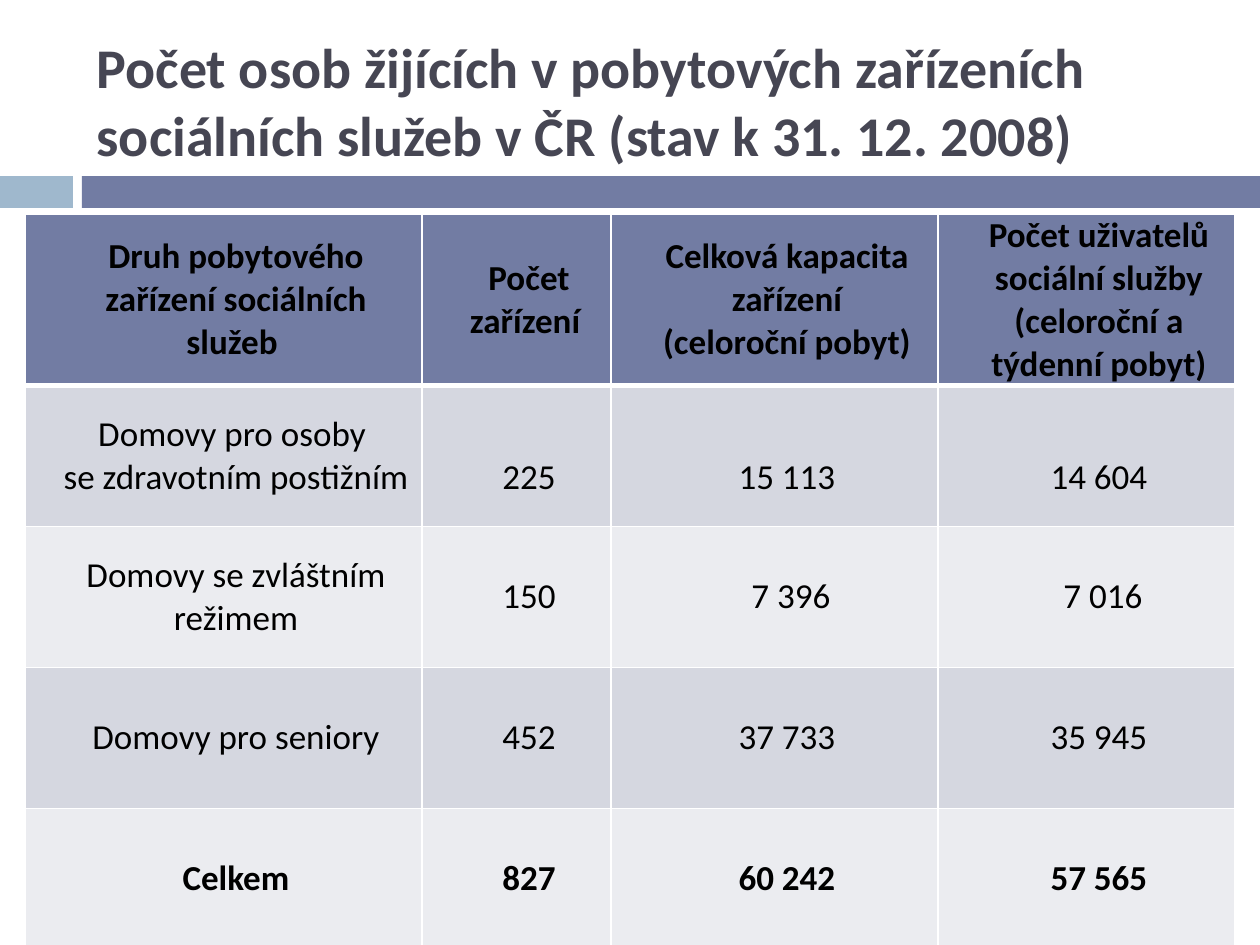
import pptx
import pptx.util
import pptx.dml.color
import pptx.enum.shapes
import pptx.enum.text
import pptx.oxml
import pptx.oxml.ns

RGBColor = pptx.dml.color.RGBColor
WHITE = RGBColor(0xFF, 0xFF, 0xFF)
BLACK = RGBColor(0x00, 0x00, 0x00)
SLATE = RGBColor(0x46, 0x46, 0x53)
INDIGO = RGBColor(0x72, 0x7C, 0xA3)
SKY = RGBColor(0x9F, 0xB8, 0xCD)
BAND_DARK = RGBColor(0xD5, 0xD7, 0xE0)
BAND_LIGHT = RGBColor(0xEB, 0xEC, 0xF0)

PX = 914400 / 126
MIDDLE = pptx.enum.text.MSO_ANCHOR.MIDDLE
LEFT = pptx.enum.text.PP_ALIGN.LEFT
CENTER = pptx.enum.text.PP_ALIGN.CENTER

TITLE = "Počet osob žijících v pobytových zařízeních sociálních služeb v ČR (stav k 31. 12. 2008)"
COLUMNS = [397, 189, 327, 297]
ROWS = [171, 141, 141, 141, 141]
FACILITIES = [
    [
        "Druh pobytového zařízení sociálních služeb ",
        "Počet zařízení ",
        "Celková kapacita zařízení\n(celoroční pobyt)",
        "Počet uživatelů sociální služby (celoroční a týdenní pobyt)",
    ],
    ["Domovy pro osoby \nse zdravotním postižním", "225", "15 113", "14 604"],
    ["Domovy se zvláštním režimem", "150", " 7 396", " 7 016"],
    ["Domovy pro seniory", "452", "37 733", "35 945"],
    ["Celkem", "827", "60 242", "57 565"],
]


def emu(px):
    return pptx.util.Emu(round(px * PX))


def apply(target, values):
    for name, value in values.items():
        setattr(target, name, value)


class SlideBuilder:
    font = "Calibri"
    indent = 25
    inset = 9
    line_drop = 43

    def __init__(self, deck):
        self.page = deck.slides.add_slide(deck.slide_layouts[5])

    def fill_text(self, frame, text, size, color, bold, align):
        frame.text = text
        for para in frame.paragraphs:
            para.alignment = align
            for span in para.runs:
                apply(span.font, {"name": self.font, "size": pptx.util.Pt(size), "bold": bold})
                span.font.color.rgb = color

    def title(self, text, left, top, width, height):
        box = self.page.shapes.title
        apply(box, {"left": emu(left), "top": emu(top), "width": emu(width), "height": emu(height)})
        apply(box.text_frame, {
            "word_wrap": True,
            "vertical_anchor": MIDDLE,
            "auto_size": pptx.enum.text.MSO_AUTO_SIZE.NONE,
        })
        self.fill_text(box.text_frame, text, 32, SLATE, True, LEFT)

    def bar(self, left, top, width, height, color):
        kind = pptx.enum.shapes.MSO_SHAPE.RECTANGLE
        shape = self.page.shapes.add_shape(kind, emu(left), emu(top), emu(width), emu(height))
        shape.shadow.inherit = False
        shape.fill.solid()
        shape.fill.fore_color.rgb = color
        shape.line.fill.background()

    def borders(self, cell, widths):
        properties = cell._tc.get_or_add_tcPr()
        for index, (side, points) in enumerate(widths.items()):
            line = pptx.oxml.parse_xml(
                f'<a:ln{side} {pptx.oxml.ns.nsdecls("a")} w="{pptx.util.Pt(points)}">'
                f'<a:solidFill><a:srgbClr val="{WHITE}"/></a:solidFill></a:ln{side}>'
            )
            properties.insert(index, line)

    def cell(self, cell, text, fill, bold, drop):
        apply(cell, {
            "vertical_anchor": MIDDLE,
            "margin_left": emu(self.inset),
            "margin_right": emu(self.inset),
            "margin_top": emu(drop),
            "margin_bottom": 0,
        })
        cell.fill.solid()
        cell.fill.fore_color.rgb = fill
        self.fill_text(cell.text_frame, text, 20, BLACK, bold, CENTER)
        for para in cell.text_frame.paragraphs:
            para._p.get_or_add_pPr().set("marL", str(emu(self.indent)))

    def table(self, left, top, columns, rows, values):
        table = self.page.shapes.add_table(
            len(rows), len(columns), emu(left), emu(top), emu(sum(columns)), emu(sum(rows))
        ).table
        for column, width in zip(table.columns, columns):
            column.width = emu(width)
        for row, height in zip(table.rows, rows):
            row.height = emu(height)
        last = len(rows) - 1
        for r, texts in enumerate(values):
            fill = INDIGO if r == 0 else BAND_DARK if r % 2 else BAND_LIGHT
            for c, text in enumerate(texts):
                drop = self.line_drop if r == 1 and c > 0 else 0
                self.cell(table.cell(r, c), text, fill, r in (0, last), drop)
                widths = {"L": 1, "R": 1, "T": 3 if r == 1 else 1, "B": 3 if r == 0 else 1}
                self.borders(table.cell(r, c), widths)


def main():
    deck = pptx.Presentation()
    apply(deck, {"slide_width": emu(1260), "slide_height": emu(945)})
    builder = SlideBuilder(deck)
    builder.bar(0, 176, 73, 32, SKY)
    builder.bar(82, 176, 1178, 32, INDIGO)
    builder.title(TITLE, 84, 32, 1124, 136)
    builder.table(25, 214, COLUMNS, ROWS, FACILITIES)
    deck.save("out.pptx")


if __name__ == "__main__":
    main()
